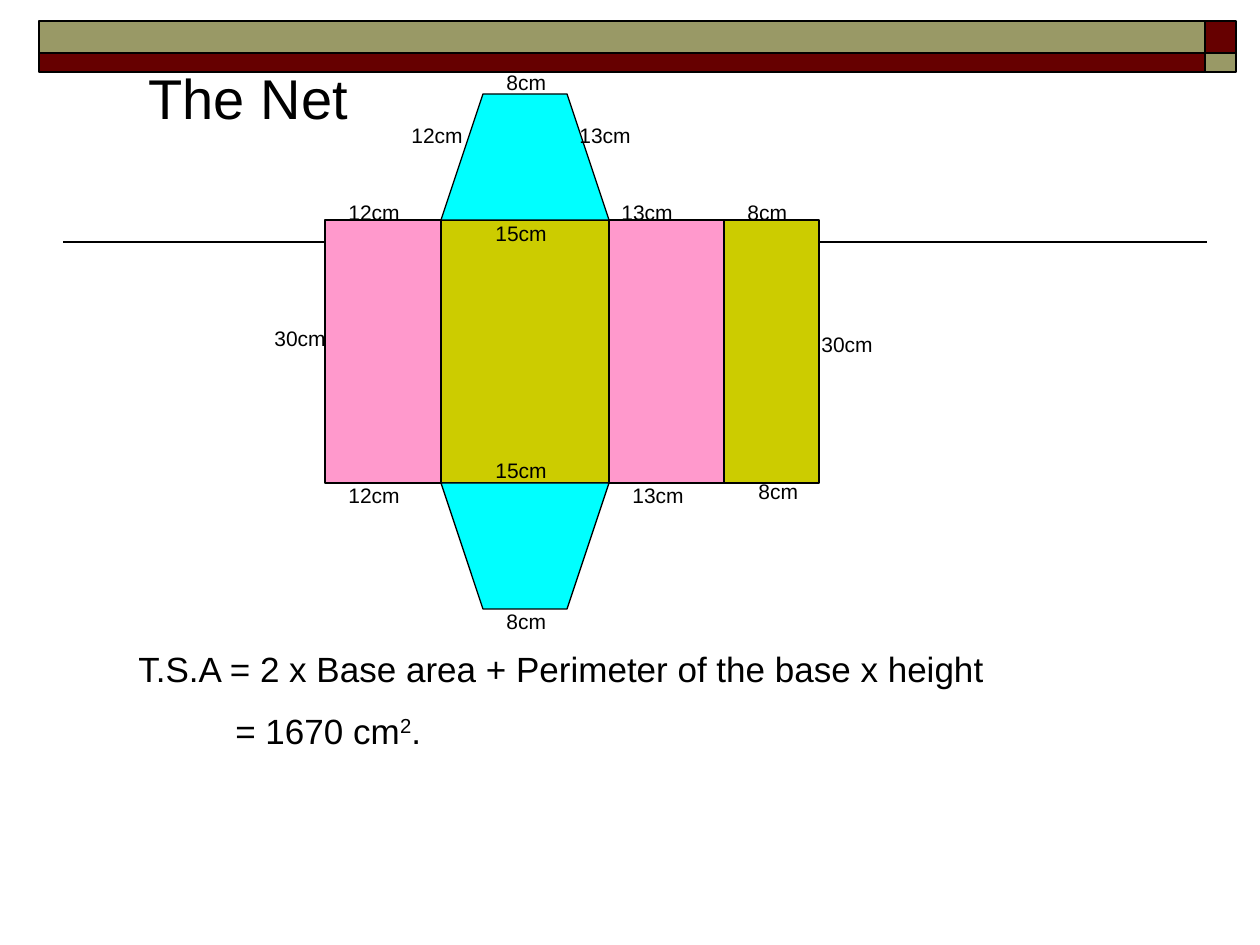
"""Builds a slide showing the net of a trapezoidal prism and its surface area."""
from dataclasses import dataclass
from typing import NamedTuple

from pptx import Presentation
from pptx.dml.color import RGBColor
from pptx.enum.shapes import MSO_CONNECTOR as Connector, MSO_SHAPE as Preset
from pptx.enum.text import MSO_ANCHOR as Anchor, MSO_AUTO_SIZE as AutoSize, PP_ALIGN as Align
from pptx.oxml.ns import qn
from pptx.util import Emu, Pt

EMU_PER_PX = 914400 / 126


@dataclass(frozen=True)
class Theme:
    font: str = "Arial"
    ink: str = "000000"
    olive: str = "999966"
    maroon: str = "660000"
    mustard: str = "CCCC00"
    pink: str = "FF99CC"
    cyan: str = "00FFFF"
    title_size: int = 32
    formula_size: int = 20
    label_size: int = 12
    frame_line: float = 1
    net_line: float = 0.75


class Box(NamedTuple):
    left: int
    top: int
    width: int
    height: int


class Panel(NamedTuple):
    width: int
    fill: str


class Label(NamedTuple):
    text: str
    left: int
    top: int


THEME = Theme()
FRAME_LEFT, FRAME_TOP = 39, 21
BAR_WIDTH, CORNER_WIDTH = 1166, 31
UPPER_HEIGHT, LOWER_HEIGHT = 32, 19
RULE_LEFT, RULE_RIGHT, RULE_TOP = 63, 1207, 242
NET_LEFT, NET_TOP, NET_HEIGHT = 325, 220, 263
BASE_LEFT, BASE_WIDTH, BASE_INSET, BASE_HEIGHT = 441, 168, 42, 126
PANELS = [
    Panel(116, THEME.pink),
    Panel(168, THEME.mustard),
    Panel(115, THEME.pink),
    Panel(95, THEME.mustard),
]
LABELS = [
    Label("12cm", 399, 116), Label("13cm", 567, 116),
    Label("8cm", 494, 63), Label("8cm", 494, 602),
    Label("15cm", 483, 214), Label("15cm", 483, 451),
    Label("12cm", 336, 193), Label("12cm", 336, 476),
    Label("13cm", 609, 193), Label("13cm", 620, 476),
    Label("8cm", 735, 193), Label("8cm", 746, 472),
    Label("30cm", 262, 319), Label("30cm", 809, 325),
]


def px(length: int) -> Emu:
    """Turn pixels into EMU."""
    return Emu(round(length * EMU_PER_PX))


def place(shape, box: Box) -> None:
    """Move and size a shape."""
    shape.left, shape.top, shape.width, shape.height = map(px, box)


def paint(shape, fill: str, line_width: float) -> None:
    """Give a shape a flat fill and a dark outline."""
    shape.shadow.inherit = False
    shape.fill.solid()
    shape.fill.fore_color.rgb = RGBColor.from_string(fill)
    shape.line.color.rgb = RGBColor.from_string(THEME.ink)
    shape.line.width = Pt(line_width)


def add_rectangle(slide, box: Box, *, fill: str, line_width: float) -> None:
    """Draw a filled rectangle."""
    shape = slide.shapes.add_shape(Preset.RECTANGLE, *map(px, box))
    paint(shape, fill, line_width)


def add_base(slide, long_edge: int, short_edge: int) -> None:
    """Draw a trapezoid base between two horizontal edges."""
    right = BASE_LEFT + BASE_WIDTH
    corners = [
        (BASE_LEFT, long_edge),
        (BASE_LEFT + BASE_INSET, short_edge),
        (right - BASE_INSET, short_edge),
        (right, long_edge),
    ]
    points = [(px(x), px(y)) for x, y in corners]
    builder = slide.shapes.build_freeform(*points[0], scale=1.0)
    builder.add_line_segments(points[1:], close=True)
    paint(builder.convert_to_shape(), THEME.cyan, THEME.net_line)


def add_rule(slide) -> None:
    """Draw the horizontal rule behind the net."""
    rule = slide.shapes.add_connector(
        Connector.STRAIGHT, px(RULE_LEFT), px(RULE_TOP), px(RULE_RIGHT), px(RULE_TOP)
    )
    rule.line.color.rgb = RGBColor.from_string(THEME.ink)
    rule.line.width = Pt(THEME.frame_line)
    properties = rule._element.spPr
    properties.append(properties.makeelement(qn("a:effectLst"), {}))


def write(paragraph, text: str, *, size: int, indent: int = 0,
          space_before: float = 0, superscript: bool = False) -> None:
    """Append a formatted run to a paragraph."""
    paragraph.alignment = Align.LEFT
    paragraph.space_before = Pt(space_before)
    if indent:
        paragraph._p.get_or_add_pPr().set("marL", str(px(indent)))
    run = paragraph.add_run()
    run.text = text
    run.font.name = THEME.font
    run.font.size = Pt(size)
    run.font.color.rgb = RGBColor.from_string(THEME.ink)
    if superscript:
        run.font._element.set("baseline", "30000")


def add_text_frame(slide, box: Box):
    """Add a wrapping text box and return its frame."""
    frame = slide.shapes.add_textbox(*map(px, box)).text_frame
    frame.word_wrap = True
    return frame


def add_frame(slide) -> None:
    """Draw the two bars across the top with contrasting corners."""
    corner_left = FRAME_LEFT + BAR_WIDTH
    lower_top = FRAME_TOP + UPPER_HEIGHT
    for top, height, bar, corner in (
        (FRAME_TOP, UPPER_HEIGHT, THEME.olive, THEME.maroon),
        (lower_top, LOWER_HEIGHT, THEME.maroon, THEME.olive),
    ):
        for left, width, fill in ((FRAME_LEFT, BAR_WIDTH, bar), (corner_left, CORNER_WIDTH, corner)):
            add_rectangle(slide, Box(left, top, width, height), fill=fill, line_width=THEME.frame_line)


def add_net(slide) -> None:
    """Draw the side panels, both bases and the edge labels."""
    left = NET_LEFT
    for panel in PANELS:
        add_rectangle(slide, Box(left, NET_TOP, panel.width, NET_HEIGHT),
                      fill=panel.fill, line_width=THEME.net_line)
        left += panel.width
    net_bottom = NET_TOP + NET_HEIGHT
    add_base(slide, NET_TOP, NET_TOP - BASE_HEIGHT)
    add_base(slide, net_bottom, net_bottom + BASE_HEIGHT)
    for label in LABELS:
        frame = add_text_frame(slide, Box(label.left, label.top, 105, 38))
        write(frame.paragraphs[0], label.text, size=THEME.label_size)


def add_title(slide) -> None:
    """Fill the title placeholder."""
    title = slide.shapes.title
    place(title, Box(136, 57, 683, 80))
    frame = title.text_frame
    frame.auto_size = AutoSize.NONE
    frame.vertical_anchor = Anchor.TOP
    write(frame.paragraphs[0], "The Net", size=THEME.title_size)


def add_formula(slide) -> None:
    """Write the surface area formula and its result."""
    frame = add_text_frame(slide, Box(126, 641, 892, 117))
    size = THEME.formula_size
    write(frame.paragraphs[0], "T.S.A = 2 x Base area + Perimeter of the base x height", size=size)
    result = frame.add_paragraph()
    for text, raised in (("= 1670 cm", False), ("2", True), (".", False)):
        write(result, text, size=size, indent=97, space_before=11.5, superscript=raised)


def main() -> None:
    """Build and save the presentation."""
    presentation = Presentation()
    presentation.slide_width, presentation.slide_height = px(1260), px(945)
    slide = presentation.slides.add_slide(presentation.slide_layouts[5])
    add_rule(slide)
    add_frame(slide)
    add_net(slide)
    add_formula(slide)
    add_title(slide)
    presentation.save("out.pptx")


if __name__ == "__main__":
    main()
